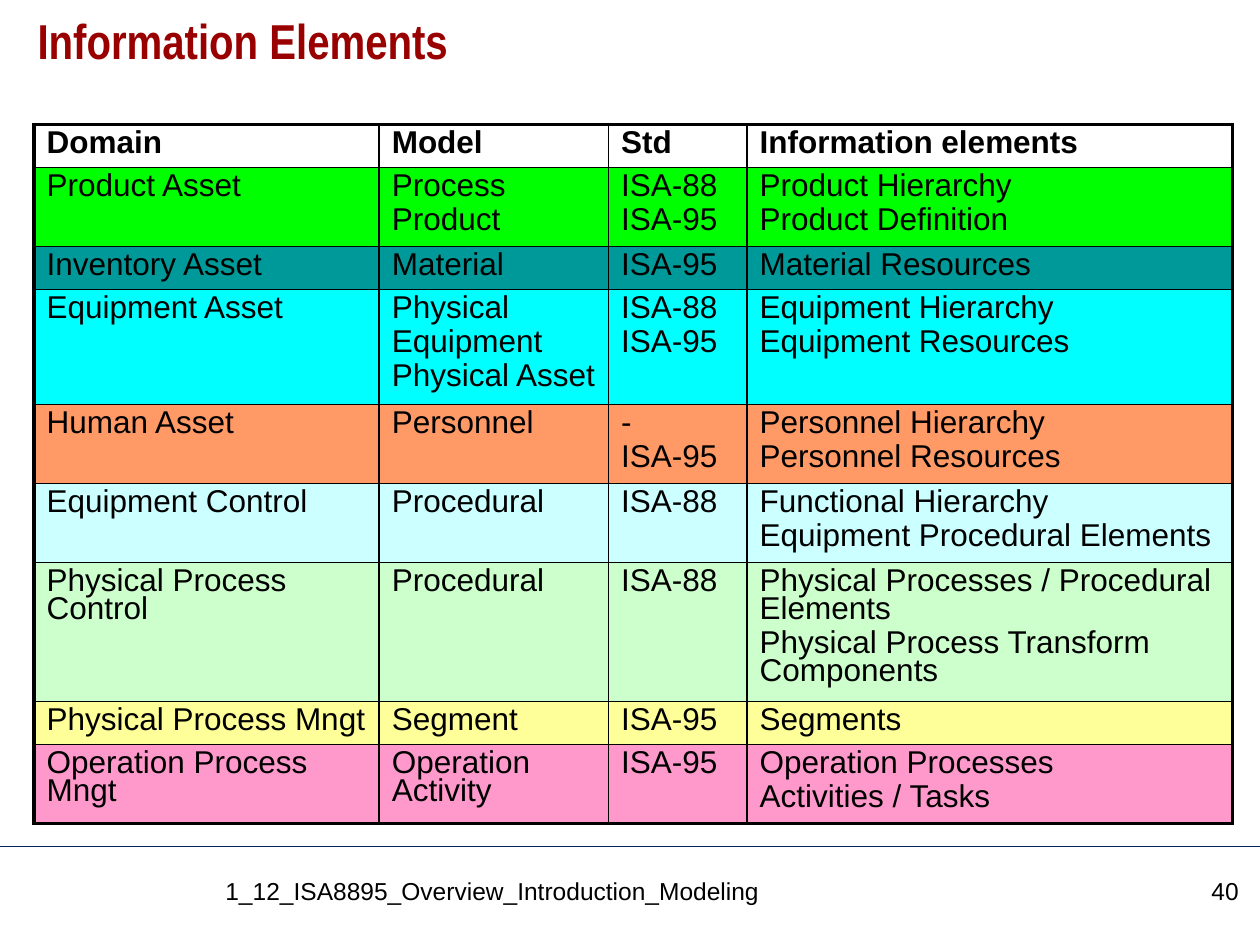
from lxml.etree import SubElement
from pptx import Presentation
from pptx.dml.color import RGBColor
from pptx.enum.shapes import MSO_CONNECTOR
from pptx.enum.text import PP_ALIGN
from pptx.oxml.ns import qn
from pptx.util import Inches, Pt

BLACK = RGBColor(0x00, 0x00, 0x00)
WHITE = RGBColor(0xFF, 0xFF, 0xFF)
DARK_RED = RGBColor(0x99, 0x00, 0x00)
NAVY = RGBColor(0x00, 0x20, 0x60)
GREEN = RGBColor(0x00, 0xFF, 0x00)
TEAL = RGBColor(0x00, 0x99, 0x99)
CYAN = RGBColor(0x00, 0xFF, 0xFF)
ORANGE = RGBColor(0xFF, 0x99, 0x66)
PALE_CYAN = RGBColor(0xCC, 0xFF, 0xFF)
PALE_GREEN = RGBColor(0xCC, 0xFF, 0xCC)
PALE_YELLOW = RGBColor(0xFF, 0xFF, 0x99)
PINK = RGBColor(0xFF, 0x99, 0xCC)

COLUMN_WIDTHS = [2.74, 1.82, 1.1, 3.85]
ROWS = [
    (WHITE, 0.33, ["Domain", "Model", "Std", "Information elements"]),
    (GREEN, 0.6, ["Product Asset", "Process\nProduct", "ISA-88\nISA-95",
                  "Product Hierarchy\nProduct Definition"]),
    (TEAL, 0.33, ["Inventory Asset", "Material", "ISA-95", "Material Resources"]),
    (CYAN, 0.87, ["Equipment Asset", "Physical\nEquipment\nPhysical Asset",
                  "ISA-88\nISA-95", "Equipment Hierarchy\nEquipment Resources"]),
    (ORANGE, 0.6, ["Human Asset", "Personnel", "-\nISA-95",
                   "Personnel Hierarchy\nPersonnel Resources"]),
    (PALE_CYAN, 0.6, ["Equipment Control", "Procedural", "ISA-88",
                      "Functional Hierarchy\nEquipment Procedural Elements"]),
    (PALE_GREEN, 1.05, ["Physical Process Control", "Procedural", "ISA-88",
                        "Physical Processes / Procedural Elements\n"
                        "Physical Process Transform Components"]),
    (PALE_YELLOW, 0.33, ["Physical Process Mngt", "Segment", "ISA-95", "Segments"]),
    (PINK, 0.6, ["Operation Process Mngt", "Operation Activity", "ISA-95",
                 "Operation Processes\nActivities / Tasks"]),
]


def style_font(para, size, color=BLACK, name="Arial", bold=False):
    para.font.size = Pt(size)
    para.font.name = name
    para.font.bold = bold
    para.font.color.rgb = color


def add_text(page, box, text):
    frame = page.shapes.add_textbox(*map(Inches, box)).text_frame
    frame.word_wrap = True
    frame.text = text
    return frame.paragraphs[0]


def add_title(page, box):
    para = add_text(page, box, "Information Elements")
    para.line_spacing = 0.9
    style_font(para, 28, DARK_RED, "Arial Narrow", True)


def set_borders(cell, widths):
    properties = cell._tc.get_or_add_tcPr()
    for side, width in widths.items():
        line = SubElement(properties, qn(f"a:ln{side}"), w=str(Pt(width)))
        fill = SubElement(line, qn("a:solidFill"))
        SubElement(fill, qn("a:srgbClr"), val=str(BLACK))


def fill_cell(cell, text, color, bold):
    cell.fill.solid()
    cell.fill.fore_color.rgb = color
    cell.text = text
    for index, para in enumerate(cell.text_frame.paragraphs):
        para.line_spacing = 0.8
        if index:
            para.space_before = Pt(3.3)
        style_font(para, 18, bold=bold)


def add_element_table(page, box):
    frame = page.shapes.add_table(len(ROWS), len(COLUMN_WIDTHS), *map(Inches, box))
    table = frame.table
    table.first_row = False
    table.horz_banding = False
    for column, width in zip(table.columns, COLUMN_WIDTHS):
        column.width = Inches(width)
    last_row, last_column = len(ROWS) - 1, len(COLUMN_WIDTHS) - 1
    for row, (color, height, texts) in enumerate(ROWS):
        table.rows[row].height = Inches(height)
        for column, text in enumerate(texts):
            cell = table.cell(row, column)
            outer = {"L": column == 0, "R": column == last_column,
                     "T": row == 0, "B": row == last_row}
            set_borders(cell, {side: 2.25 if edge else 1 for side, edge in outer.items()})
            fill_cell(cell, text, color, row == 0)


def add_footer(page, box):
    left, top, width, height = box
    rule = page.shapes.add_connector(
        MSO_CONNECTOR.STRAIGHT, Inches(left), Inches(top), Inches(left + width), Inches(top))
    rule.line.color.rgb = NAVY
    rule.line.width = Pt(0.75)
    SubElement(rule._element.spPr, qn("a:effectLst"))
    text_top, text_height = top + 0.18, height - 0.33
    name = add_text(page, (left + 1.69, text_top, 7.21, text_height),
                    "1_12_ISA8895_Overview_Introduction_Modeling")
    number = add_text(page, (left + 9.01, text_top, 0.92, text_height), "40")
    number.alignment = PP_ALIGN.RIGHT
    for para in (name, number):
        style_font(para, 14)


def main():
    deck = Presentation()
    deck.slide_width, deck.slide_height = Inches(10), Inches(7.5)
    page = deck.slides.add_slide(deck.slide_layouts[6])
    add_title(page, (0.2, 0.09, 9.61, 0.83))
    add_element_table(page, (0.27, 0.99, sum(COLUMN_WIDTHS), 5.31))
    add_footer(page, (0, 6.72, 10, 0.78))
    deck.save("out.pptx")


if __name__ == "__main__":
    main()
